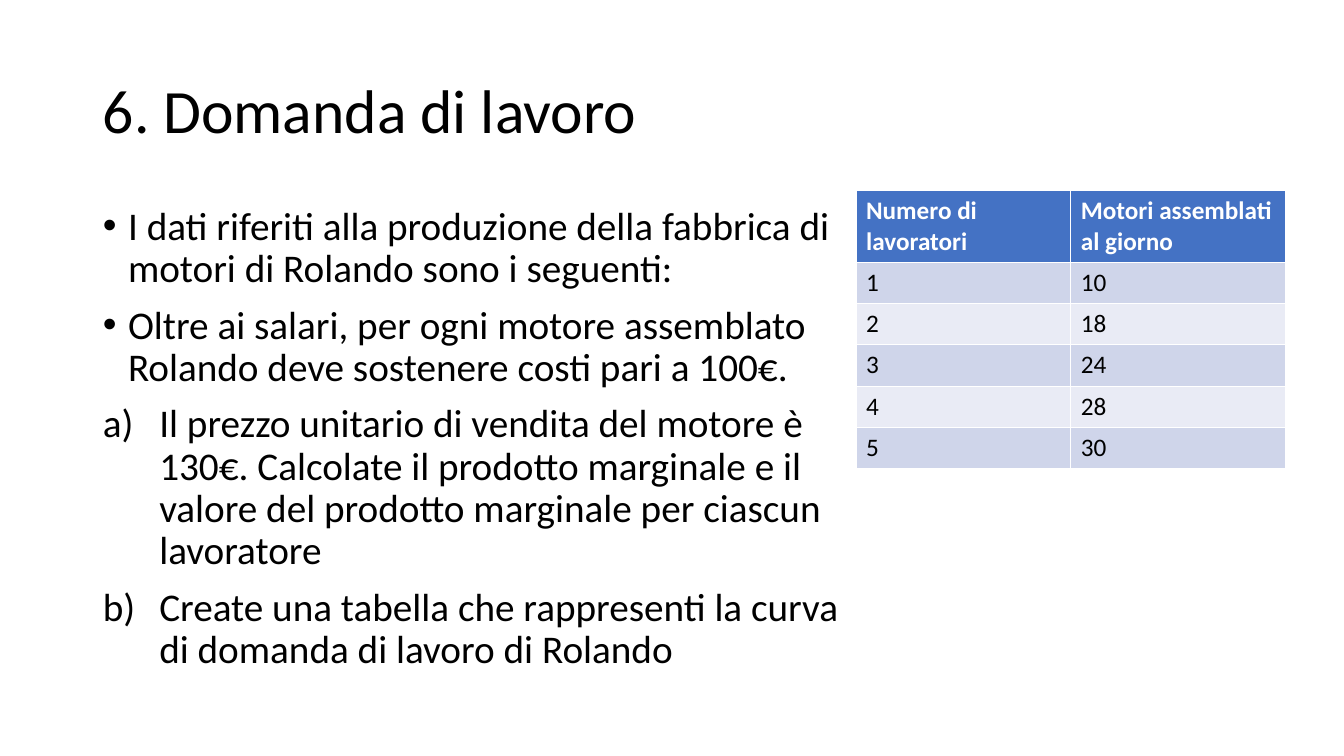
from lxml.etree import SubElement
from pptx import Presentation
from pptx.dml.color import RGBColor
from pptx.enum.text import MSO_ANCHOR, MSO_AUTO_SIZE, PP_ALIGN
from pptx.oxml.ns import qn
from pptx.util import Inches, Pt

BLACK = RGBColor(0x00, 0x00, 0x00)
WHITE = RGBColor(0xFF, 0xFF, 0xFF)
HEADER_BLUE = RGBColor(0x44, 0x72, 0xC4)
ROW_BANDS = (RGBColor(0xCF, 0xD5, 0xEA), RGBColor(0xE9, 0xEB, 0xF5))

TITLE = "6. Domanda di lavoro"
BULLETS = [
    "I dati riferiti alla produzione della fabbrica di motori di Rolando sono i seguenti:",
    "Oltre ai salari, per ogni motore assemblato Rolando deve sostenere costi pari a 100€.",
]
QUESTIONS = [
    "Il prezzo unitario di vendita del motore è 130€. Calcolate il prodotto marginale "
    "e il valore del prodotto marginale per ciascun lavoratore",
    "Create una tabella che rappresenti la curva di domanda di lavoro di Rolando",
]
PRODUCTION = [
    ("Numero di lavoratori", "Motori assemblati al giorno"),
    ("1", "10"),
    ("2", "18"),
    ("3", "24"),
    ("4", "28"),
    ("5", "30"),
]


class SlideBuilder:
    """Holds the style and the current slide, and adds each kind of element."""

    font_name = "Calibri"

    def __init__(self, presentation):
        self.slide = presentation.slides.add_slide(presentation.slide_layouts[1])

    def add_run(self, paragraph, text, size, color=BLACK, bold=False):
        """Add one formatted run to a paragraph."""
        run = paragraph.add_run()
        run.text = text
        run.font.name = self.font_name
        run.font.size = Pt(size)
        run.font.bold = bold
        run.font.color.rgb = color

    def place(self, shape, left, top, width, height, anchor):
        """Move a placeholder and return its text frame."""
        shape.left, shape.top = Inches(left), Inches(top)
        shape.width, shape.height = Inches(width), Inches(height)
        frame = shape.text_frame
        frame.auto_size = MSO_AUTO_SIZE.NONE
        frame.word_wrap = True
        frame.vertical_anchor = anchor
        return frame

    def add_title(self, text):
        """Fill the title placeholder."""
        frame = self.place(self.slide.shapes.title, 0.92, 0.4, 11.5, 1.45, MSO_ANCHOR.MIDDLE)
        paragraph = frame.paragraphs[0]
        paragraph.alignment = PP_ALIGN.LEFT
        paragraph.line_spacing = 0.9
        self.add_run(paragraph, text, 44)

    def add_list(self, bullets, questions):
        """Fill the body placeholder with bullets, then lettered questions."""
        frame = self.place(self.slide.placeholders[1], 0.92, 2, 7.57, 4.76, MSO_ANCHOR.TOP)
        items = [(text, 0.25, "buChar", {"char": "•"}) for text in bullets]
        items += [(text, 0.56, "buAutoNum", {"type": "alphaLcParenR"}) for text in questions]
        for index, (text, indent, marker, attributes) in enumerate(items):
            paragraph = frame.add_paragraph() if index else frame.paragraphs[0]
            paragraph.line_spacing = 0.9
            paragraph.space_before = Pt(10)
            properties = paragraph._p.get_or_add_pPr()
            properties.set("marL", str(Inches(indent)))
            properties.set("indent", str(-Inches(indent)))
            if marker == "buChar":
                SubElement(properties, qn("a:buFont"), typeface="Arial")
            else:
                SubElement(properties, qn("a:buFont"), typeface="+mj-lt")
            SubElement(properties, qn(f"a:{marker}"), **attributes)
            self.add_run(paragraph, text, 28)

    def add_table(self, rows):
        """Add a table with a header row and banded body rows."""
        frame = self.slide.shapes.add_table(
            len(rows), len(rows[0]), Inches(8.49), Inches(1.89), Inches(4.26), Inches(2.73)
        )
        table = frame.table
        for row_index, values in enumerate(rows):
            header = row_index == 0
            table.rows[row_index].height = Inches(0.7 if header else 0.41)
            for column_index, value in enumerate(values):
                cell = table.cell(row_index, column_index)
                cell.fill.solid()
                cell.fill.fore_color.rgb = HEADER_BLUE if header else ROW_BANDS[(row_index - 1) % 2]
                paragraph = cell.text_frame.paragraphs[0]
                self.add_run(paragraph, value, 18, WHITE if header else BLACK, header)


def main():
    """Build the slide and save it."""
    presentation = Presentation()
    presentation.slide_width = Inches(13.33)
    presentation.slide_height = Inches(7.5)
    builder = SlideBuilder(presentation)
    builder.add_title(TITLE)
    builder.add_list(BULLETS, QUESTIONS)
    builder.add_table(PRODUCTION)
    presentation.save("out.pptx")


if __name__ == "__main__":
    main()
